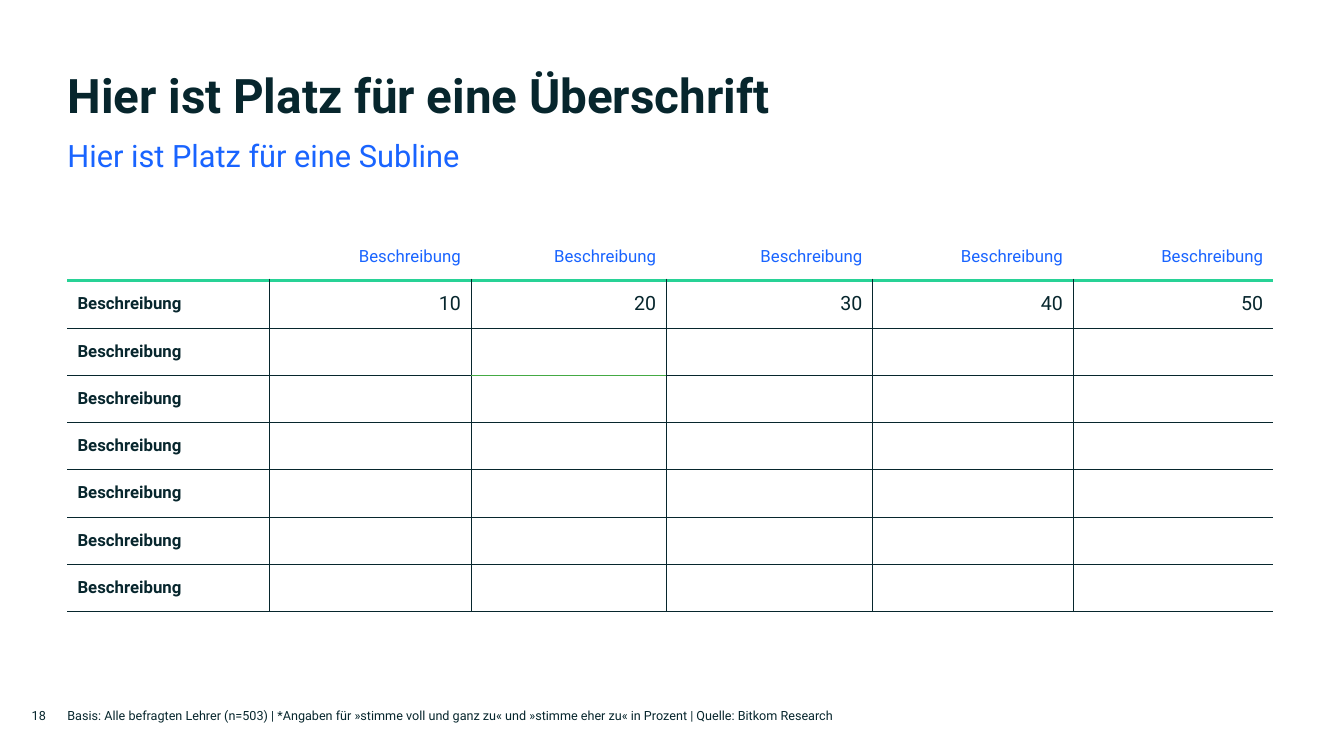
"""Build a slide with a heading, a subline and a description table."""
from dataclasses import dataclass, field

from lxml import etree
from pptx import Presentation
from pptx import util as u
from pptx.dml.color import RGBColor
from pptx.enum import text
from pptx.oxml import ns


@dataclass(frozen=True)
class Theme:
    font: str = "Roboto"
    dark: str = "07262D"
    blue: str = "1964FF"
    green: str = "28D296"
    leaf: str = "44AA44"
    title: int = 34
    subline: int = 22
    value: int = 14
    label: int = 12
    small: int = 9


THEME = Theme()


@dataclass(frozen=True)
class TextStyle:
    size: int
    color: str = THEME.dark
    bold: bool = False
    paragraph: dict = field(default_factory=dict)


@dataclass(frozen=True)
class TextItem:
    content: str
    left: float
    top: float
    width: float
    height: float
    style: TextStyle


@dataclass(frozen=True)
class Border:
    color: str
    points: float


THIN = Border(THEME.dark, 0.25)
THICK = Border(THEME.green, 3)
ACCENT = Border(THEME.leaf, 0.5)
ACCENT_CELL = (2, 2)

RIGHT = {"alignment": text.PP_ALIGN.RIGHT}
HEADER = TextStyle(THEME.label, THEME.blue, paragraph=RIGHT)
ROW_LABEL = TextStyle(THEME.label, bold=True)
VALUE = TextStyle(THEME.value, paragraph=RIGHT)
SMALL = TextStyle(THEME.small)

TITLE = TextItem(
    "Hier ist Platz für eine Überschrift", 1.7, 1.7, 30.2, 1.42,
    TextStyle(THEME.title, bold=True, paragraph={
        "line_spacing": u.Pt(40), "alignment": text.PP_ALIGN.LEFT}))
TEXT_BOXES = (
    TextItem("Hier ist Platz für eine Subline", 1.7, 3.4, 23, 0.97,
             TextStyle(THEME.subline, THEME.blue, paragraph={
                 "line_spacing": u.Pt(28), "space_after": u.Pt(10)})),
    TextItem("Basis: Alle befragten Lehrer (n=503) | *Angaben für »stimme voll "
             "und ganz zu« und »stimme eher zu« in Prozent | Quelle: Bitkom Research",
             1.7, 17.83, 23.2, 0.69, SMALL),
    TextItem("18", 0.8, 17.83, 0.88, 0.69, SMALL),
)

TABLE_LEFT, TABLE_TOP, ROW_HEIGHT = 1.7, 5.88, 1.19
COLUMN_WIDTHS = (5.07, 5.1, 4.92, 5.2, 5.05, 5.05)
LABEL = "Beschreibung"
VALUES = ("10", "20", "30", "40", "50")
ROW_COUNT = 8
PLAIN_TABLE_STYLE = "{2D5ABB26-0587-4C30-8999-92F81FD0307C}"


def set_values(target: object, values: dict) -> None:
    for name, value in values.items():
        setattr(target, name, value)


def write(frame, content: str, style: TextStyle) -> None:
    frame.text = content
    paragraph = frame.paragraphs[0]
    set_values(paragraph, style.paragraph)
    font = paragraph.runs[0].font
    set_values(font, {"name": THEME.font, "size": u.Pt(style.size), "bold": style.bold})
    font.color.rgb = RGBColor.from_string(style.color)


def place_text(shape, item: TextItem) -> None:
    set_values(shape, {name: u.Cm(getattr(item, name))
                       for name in ("left", "top", "width", "height")})
    set_values(shape.text_frame, {
        "margin_left": 0, "margin_right": 0, "margin_top": 0, "margin_bottom": 0,
        "word_wrap": True, "auto_size": text.MSO_AUTO_SIZE.NONE,
        "vertical_anchor": text.MSO_ANCHOR.TOP})
    write(shape.text_frame, item.content, item.style)


def bottom_border(row: int, column: int) -> Border:
    if row == 0:
        return THICK
    return ACCENT if (row, column) == ACCENT_CELL else THIN


def cell_borders(row: int, column: int) -> dict[str, Border]:
    borders = {}
    if row and column:
        borders["lnL"] = THIN
    if row and column < len(COLUMN_WIDTHS) - 1:
        borders["lnR"] = THIN
    if row:
        borders["lnT"] = bottom_border(row - 1, column)
    borders["lnB"] = bottom_border(row, column)
    return borders


def draw_borders(cell, borders: dict[str, Border]) -> None:
    properties = cell._tc.get_or_add_tcPr()
    for side, border in borders.items():
        line = etree.SubElement(properties, ns.qn(f"a:{side}"), w=str(u.Pt(border.points)))
        fill = etree.SubElement(line, ns.qn("a:solidFill"))
        etree.SubElement(fill, ns.qn("a:srgbClr"), val=border.color)


def cell_text(row: int, column: int) -> tuple[str, TextStyle]:
    if row == 0:
        return (LABEL if column else "", HEADER)
    if column == 0:
        return LABEL, ROW_LABEL
    return (VALUES[column - 1] if row == 1 else "", VALUE)


def add_description_table(slide) -> None:
    table = slide.shapes.add_table(
        ROW_COUNT, len(COLUMN_WIDTHS), u.Cm(TABLE_LEFT), u.Cm(TABLE_TOP),
        u.Cm(sum(COLUMN_WIDTHS)), u.Cm(ROW_HEIGHT * ROW_COUNT)).table
    set_values(table, {"first_row": False, "horz_banding": False})
    table._tbl.tblPr.find(ns.qn("a:tableStyleId")).text = PLAIN_TABLE_STYLE
    for column, width in zip(table.columns, COLUMN_WIDTHS):
        column.width = u.Cm(width)
    for row_index, row in enumerate(table.rows):
        row.height = u.Cm(ROW_HEIGHT)
        for column_index, cell in enumerate(row.cells):
            draw_borders(cell, cell_borders(row_index, column_index))
            cell.fill.background()
            cell.vertical_anchor = text.MSO_ANCHOR.MIDDLE
            content, style = cell_text(row_index, column_index)
            if content:
                write(cell.text_frame, content, style)


def main() -> None:
    presentation = Presentation()
    set_values(presentation, {"slide_width": u.Cm(33.87), "slide_height": u.Cm(19.05)})
    slide = presentation.slides.add_slide(presentation.slide_layouts.get_by_name("Title Only"))
    place_text(slide.shapes.title, TITLE)
    for item in TEXT_BOXES:
        place_text(slide.shapes.add_textbox(0, 0, 0, 0), item)
    add_description_table(slide)
    presentation.save("out.pptx")


if __name__ == "__main__":
    main()
